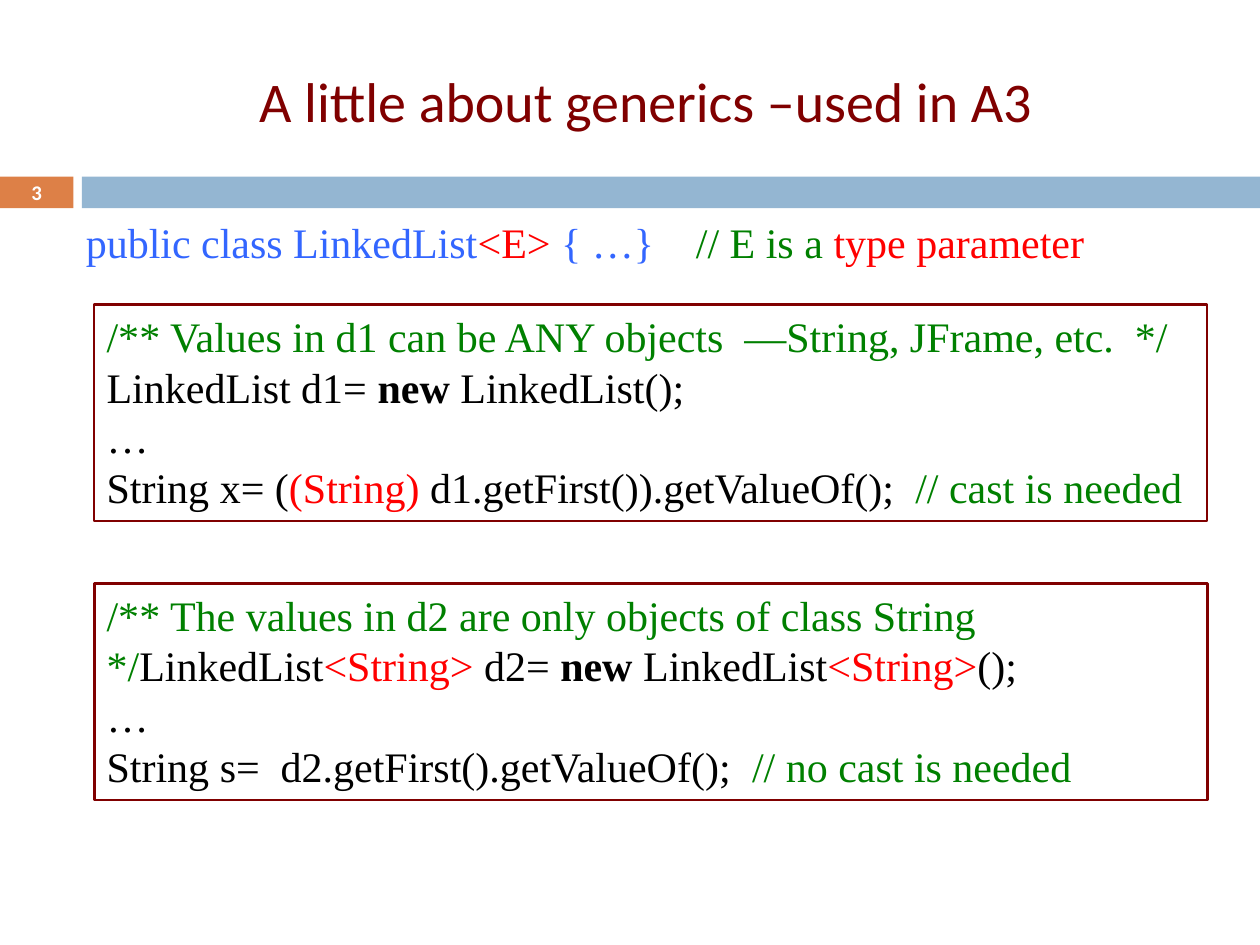
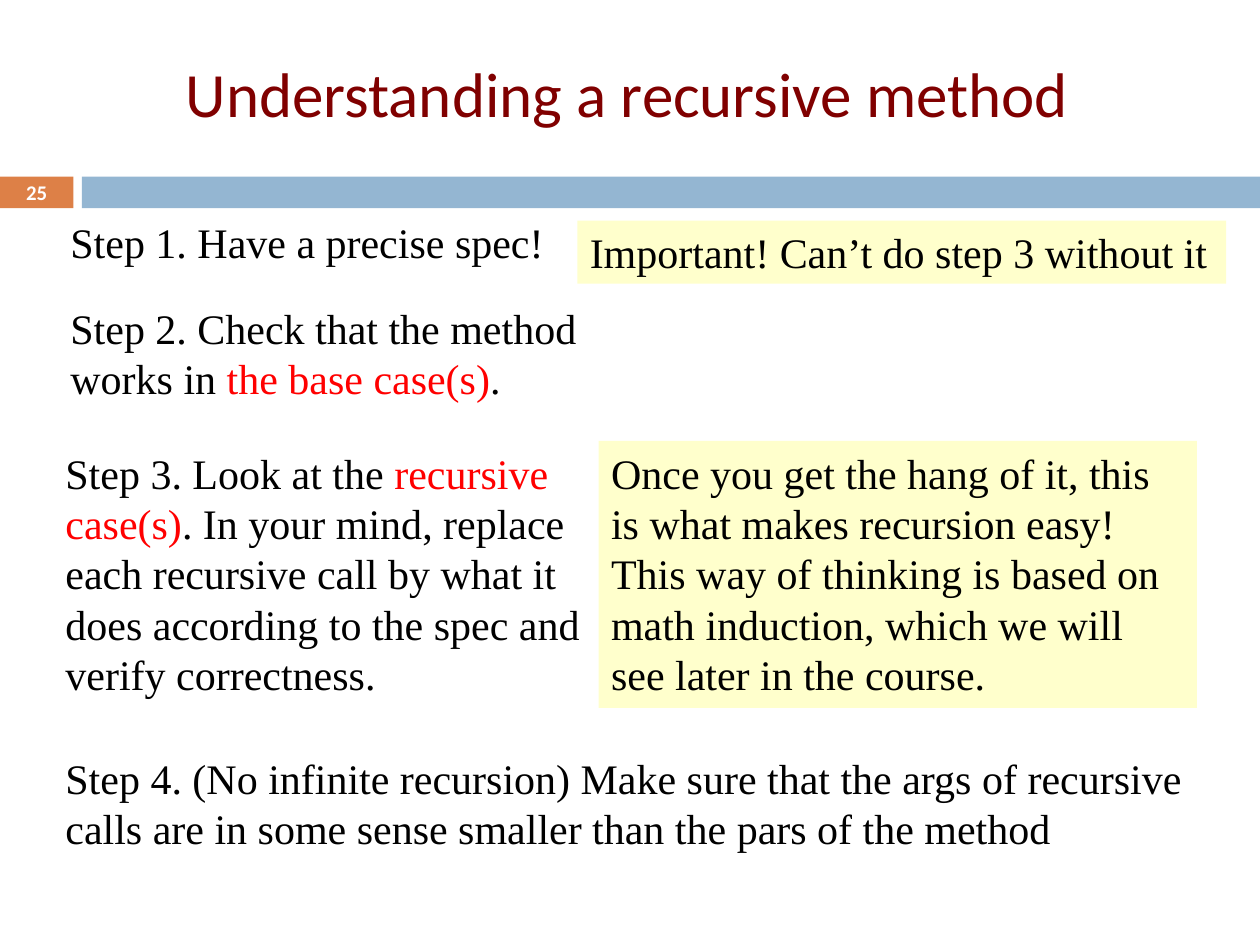
from dataclasses import dataclass
from typing import NamedTuple, Optional

from lxml.etree import SubElement
from pptx import Presentation
from pptx.dml.color import RGBColor
from pptx.enum.shapes import MSO_SHAPE as Preset
from pptx.enum.text import MSO_ANCHOR as Anchor, PP_ALIGN as Align
from pptx.oxml.ns import qn
from pptx.shapes.autoshape import Shape
from pptx.slide import Slide
from pptx.util import Cm, Pt

MAROON = RGBColor(0x80, 0x00, 0x00)
ORANGE = RGBColor(0xDD, 0x80, 0x47)
STEEL = RGBColor(0x94, 0xB6, 0xD2)
CREAM = RGBColor(0xFF, 0xFF, 0xCC)
BLUE = RGBColor(0x33, 0x66, 0xFF)
GREEN = RGBColor(0x00, 0x80, 0x00)
RED = RGBColor(0xFF, 0x00, 0x00)
BLACK = RGBColor(0x00, 0x00, 0x00)
WHITE = RGBColor(0xFF, 0xFF, 0xFF)

HEADING_FONT = "Calibri"
BODY_FONT = "Times New Roman"
BODY_SIZE = 24
BAND_TOP, BAND_HEIGHT = 3.56, 0.64
NUMBER_WIDTH, BAND_LEFT = 1.48, 1.65
SLIDE_WIDTH, SLIDE_HEIGHT = 25.4, 19.05


class Box(NamedTuple):
    left: float
    top: float
    width: float
    height: float


class Run(NamedTuple):
    text: str
    color: RGBColor = BLACK
    bold: bool = False


Lines = list[list[Run]]


@dataclass(frozen=True)
class Passage:
    box: Box
    lines: Lines
    fill: Optional[RGBColor] = None
    border: float = 0
    space_before: float = 0
    left_inset: float = 0.25
    right_inset: float = 0.25
    wrap: bool = True
    tab_stop: float = 0


@dataclass(frozen=True)
class Page:
    number: int
    title: str
    title_box: Box
    title_size: float
    passages: list[Passage]


def add_block(slide: Slide, box: Box, fill: Optional[RGBColor] = None, border: float = 0) -> Shape:
    block = slide.shapes.add_shape(Preset.RECTANGLE, *map(Cm, box))
    block.shadow.inherit = False
    if fill is None:
        block.fill.background()
    else:
        block.fill.solid()
        block.fill.fore_color.rgb = fill
    if border:
        block.line.color.rgb = MAROON
        block.line.width = Pt(border)
    else:
        block.line.fill.background()
    return block


def write(shape: Shape, lines: Lines, font: str, size: float, align: Align, anchor: Anchor,
          space_before: float = 0, tab_stop: float = 0) -> None:
    frame = shape.text_frame
    frame.vertical_anchor = anchor
    for index, line in enumerate(lines):
        paragraph = frame.add_paragraph() if index else frame.paragraphs[0]
        paragraph.alignment = align
        paragraph.space_before = Pt(space_before)
        if tab_stop:
            stops = SubElement(paragraph._p.get_or_add_pPr(), qn("a:tabLst"))
            SubElement(stops, qn("a:tab"), pos=str(Cm(tab_stop)), algn="l")
        for part in line:
            run = paragraph.add_run()
            run.text = part.text
            run.font.name = font
            run.font.size = Pt(size)
            run.font.bold = part.bold
            run.font.color.rgb = part.color


def add_passage(slide: Slide, passage: Passage) -> None:
    if passage.fill is None and not passage.border:
        holder = slide.shapes.add_textbox(*map(Cm, passage.box))
    else:
        holder = add_block(slide, passage.box, passage.fill, passage.border)
    frame = holder.text_frame
    frame.word_wrap = passage.wrap
    frame.margin_left, frame.margin_right = Cm(passage.left_inset), Cm(passage.right_inset)
    write(holder, passage.lines, BODY_FONT, BODY_SIZE, Align.LEFT, Anchor.TOP,
          passage.space_before, passage.tab_stop)


def add_page(deck: Presentation, page: Page) -> None:
    slide = deck.slides.add_slide(deck.slide_layouts[6])
    number = add_block(slide, Box(0, BAND_TOP, NUMBER_WIDTH, BAND_HEIGHT), ORANGE)
    frame = number.text_frame
    frame.margin_top = frame.margin_bottom = Cm(0)
    write(number, [[Run(str(page.number), WHITE, True)]], HEADING_FONT, 11.9, Align.CENTER, Anchor.MIDDLE)
    add_block(slide, Box(BAND_LEFT, BAND_TOP, SLIDE_WIDTH - BAND_LEFT, BAND_HEIGHT), STEEL)
    title = slide.shapes.add_textbox(*map(Cm, page.title_box))
    title.text_frame.word_wrap = True
    write(title, [[Run(page.title, MAROON)]], HEADING_FONT, page.title_size, Align.CENTER, Anchor.MIDDLE)
    for passage in page.passages:
        add_passage(slide, passage)


def step(box: Box, lines: Lines, space_before: float = 0, left_inset: float = 0.25) -> Passage:
    return Passage(box, lines, space_before=space_before, left_inset=left_inset, right_inset=0.36)


def code(top: float, border: float, lines: Lines) -> Passage:
    return Passage(Box(1.9, top, 22.44, 4.37), lines, border=border)


GENERICS = Page(3, "A little about generics –used in A3", Box(1.7, 0.64, 22.65, 2.74), 32, [
    Passage(Box(1.48, 4.24, 22.65, 1.9), [
        [Run("public class LinkedList", BLUE), Run("<E> ", RED), Run("{ …}\t", BLUE),
         Run("// E is a ", GREEN), Run("type parameter", RED)],
    ], space_before=7, tab_stop=12.3),
    code(6.14, 1.25, [
        [Run("/** Values in d1 can be ANY objects  —String, JFrame, etc.  */", GREEN)],
        [Run("LinkedList d1= "), Run("new ", bold=True), Run("LinkedList();")],
        [Run("…")],
        [Run("String x= ("), Run("(String) ", RED), Run("d1.getFirst()).getValueOf();  "),
         Run("// cast is needed", GREEN)],
    ]),
    code(11.76, 1.5, [
        [Run("/** The values in d2 are only objects of class String */", GREEN),
         Run("LinkedList"), Run("<String>", RED), Run(" d2= "), Run("new ", bold=True),
         Run("LinkedList"), Run("<String>", RED), Run("();")],
        [Run("…")],
        [Run("String s=  d2.getFirst().getValueOf();  "), Run("// no cast is needed", GREEN)],
    ]),
])

RECURSION = Page(25, "Understanding a recursive method", Box(1.85, 0.64, 21.59, 2.46), 36, [
    step(Box(1.07, 4.24, 11.63, 1.7), [[Run("Step 1. Have a precise spec!")]], 7, 0.35),
    step(Box(1.07, 5.97, 11.0, 2.69), [
        [Run("Step 2. Check that the method works in "), Run("the base case(s)", RED), Run(".")],
    ], 7, 0.35),
    step(Box(1.07, 8.89, 11.43, 5.92), [
        [Run("Step 3. Look at the"), Run(" recursive", RED)],
        [Run("case(s)", RED), Run(". In your mind, replace")],
        [Run("each recursive call by what it")],
        [Run("does according to the spec and verify correctness.")],
    ]),
    step(Box(1.07, 15.04, 23.5, 2.97), [
        [Run("Step 4. (No infinite recursion) Make sure that the args of recursive calls "
             "are in some sense smaller than the pars of the method")],
    ]),
    Passage(Box(11.64, 4.45, 13.08, 1.27), [[Run("Important! Can’t do step 3 without it")]],
            fill=CREAM, wrap=False),
    Passage(Box(12.07, 8.89, 12.06, 5.38), [
        [Run("Once you get the hang of it, this is what makes recursion easy! This way of thinking "
             "is based on math induction, which we will see later in the course.")],
    ], fill=CREAM),
])


def main() -> None:
    deck = Presentation()
    deck.slide_width, deck.slide_height = Cm(SLIDE_WIDTH), Cm(SLIDE_HEIGHT)
    for page in (GENERICS, RECURSION):
        add_page(deck, page)
    deck.save("out.pptx")


if __name__ == "__main__":
    main()
